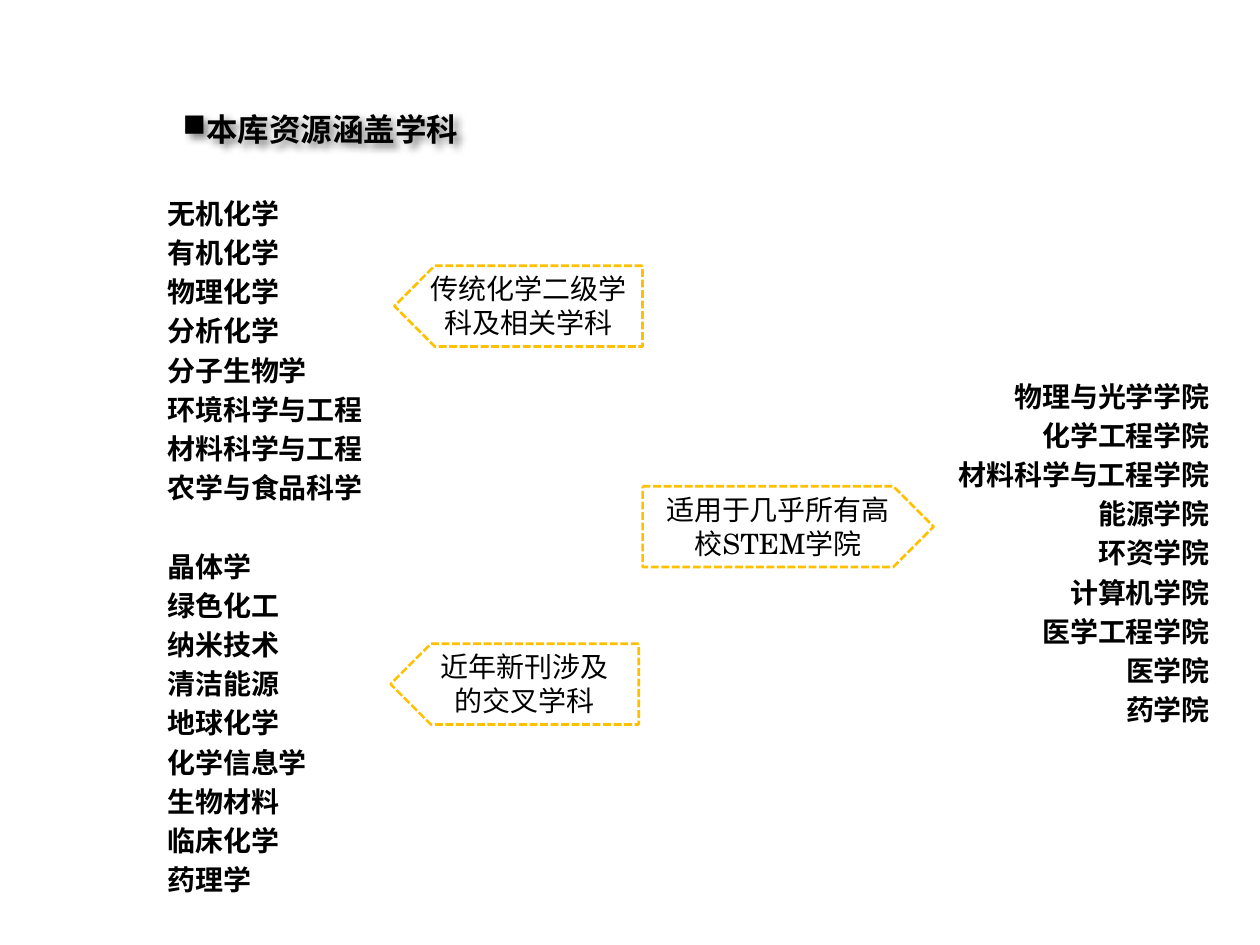
from dataclasses import dataclass

from lxml import etree
from pptx import Presentation
from pptx.dml.color import RGBColor
from pptx.enum.dml import MSO_LINE
from pptx.enum.shapes import MSO_SHAPE
from pptx.enum.text import MSO_ANCHOR, PP_ALIGN
from pptx.oxml.ns import qn
from pptx.util import Inches, Pt

LEFT, MID, RIGHT = PP_ALIGN.LEFT, PP_ALIGN.CENTER, PP_ALIGN.RIGHT
TOP, CENTER = MSO_ANCHOR.TOP, MSO_ANCHOR.MIDDLE
ARROW = MSO_SHAPE.PENTAGON
DASH = MSO_LINE.SQUARE_DOT
SANS, SERIF = "Noto Sans CJK SC", "TeX Gyre Schola"
BLACK, GOLD = "000000", "FFC000"
GAP, BREAK = 3.2, 25.6


@dataclass
class Box:
    left: float
    top: float
    width: float
    height: float

    def place(self) -> list:
        return [Inches(n) for n in (self.left, self.top, self.width, self.height)]


@dataclass
class Column:
    box: Box
    groups: list[list[str]]
    align: PP_ALIGN = LEFT


@dataclass
class Label:
    box: Box
    lines: list[str]
    flip: bool = False


COLUMNS = [
    Column(Box(6.72, 2.96, 2.98, 2.96), [
        ["物理与光学学院", "化学工程学院", "材料科学与工程学院", "能源学院", "环资学院",
         "计算机学院", "医学工程学院", "医学院", "药学院"],
    ], RIGHT),
    Column(Box(1.23, 1.51, 4.65, 5.86), [
        ["无机化学", "有机化学", "物理化学", "分析化学", "分子生物学",
         "环境科学与工程", "材料科学与工程", "农学与食品科学"],
        ["晶体学", "绿色化工", "纳米技术", "清洁能源", "地球化学",
         "化学信息学", "生物材料", "临床化学", "药理学"],
    ]),
]
LABELS = [
    Label(Box(3.13, 2.11, 1.97, 0.64), ["传统化学二级学科及相关学科"], True),
    Label(Box(3.1, 5.11, 1.97, 0.64), ["近年新刊涉及", "的交叉学科"], True),
    Label(Box(5.1, 3.86, 2.31, 0.64), ["适用于几乎所有高校STEM学院"]),
]


def color(code: str) -> RGBColor:
    return RGBColor.from_string(code)


def write(frame, text: str, *, first=True, size=16, face=SANS, bold=False,
          align=LEFT, before=0.0):
    para = frame.paragraphs[0] if first else frame.add_paragraph()
    para.alignment = align
    para.space_before = Pt(before)
    run = para.add_run()
    run.text = text
    font = run.font
    font.size, font.name, font.bold = Pt(size), face, bold
    font.color.rgb = color(BLACK)
    east = etree.SubElement(font._element, qn("a:ea"))
    east.set("typeface", face)
    return para


def add_box(slide, box: Box, anchor=TOP):
    shape = slide.shapes.add_textbox(*box.place())
    shape.text_frame.word_wrap = True
    shape.text_frame.vertical_anchor = anchor
    return shape


def add_column(slide, column: Column) -> None:
    frame = add_box(slide, column.box).text_frame
    for part, group in enumerate(column.groups):
        for row, name in enumerate(group):
            first = part == row == 0
            before = 0 if first else GAP if row else BREAK
            write(frame, name, first=first, bold=True, align=column.align, before=before)


def add_title(slide, text: str) -> None:
    shape = add_box(slide, Box(0.63, 0.47, 7.85, 1.14), CENTER)
    para = write(shape.text_frame, text, size=18, bold=True)
    para.line_spacing = 0.9
    props = para._p.get_or_add_pPr()
    props.set("marL", "0")
    props.set("indent", str(Inches(0.72)))
    etree.SubElement(props, qn("a:buChar")).set("char", "■")
    glow = etree.SubElement(shape._element.spPr, qn("a:effectLst"))
    shade = etree.SubElement(glow, qn("a:outerShdw"), blurRad=str(Pt(4)),
                             dist=str(Pt(3)), dir="2700000", algn="tl")
    tone = etree.SubElement(shade, qn("a:srgbClr"), val=BLACK)
    etree.SubElement(tone, qn("a:alpha"), val="43000")


def add_label(slide, label: Label) -> None:
    shape = slide.shapes.add_shape(ARROW, *label.box.place())
    shape.shadow.inherit = False
    shape.fill.background()
    shape.line.color.rgb = color(GOLD)
    shape.line.width = Pt(1.5)
    shape.line.dash_style = DASH
    if label.flip:
        shape._element.spPr.xfrm.set("flipH", "1")
    frame = shape.text_frame
    frame.word_wrap = True
    frame.vertical_anchor = TOP
    for row, line in enumerate(label.lines):
        write(frame, line, first=row == 0, face=SERIF, align=MID)


def main() -> None:
    deck = Presentation()
    deck.slide_width, deck.slide_height = Inches(10), Inches(7.5)
    slide = deck.slides.add_slide(deck.slide_layouts[6])
    school, field = COLUMNS
    add_column(slide, school)
    add_title(slide, "本库资源涵盖学科")
    add_column(slide, field)
    for label in LABELS:
        add_label(slide, label)
    deck.save("out.pptx")


if __name__ == "__main__":
    main()
